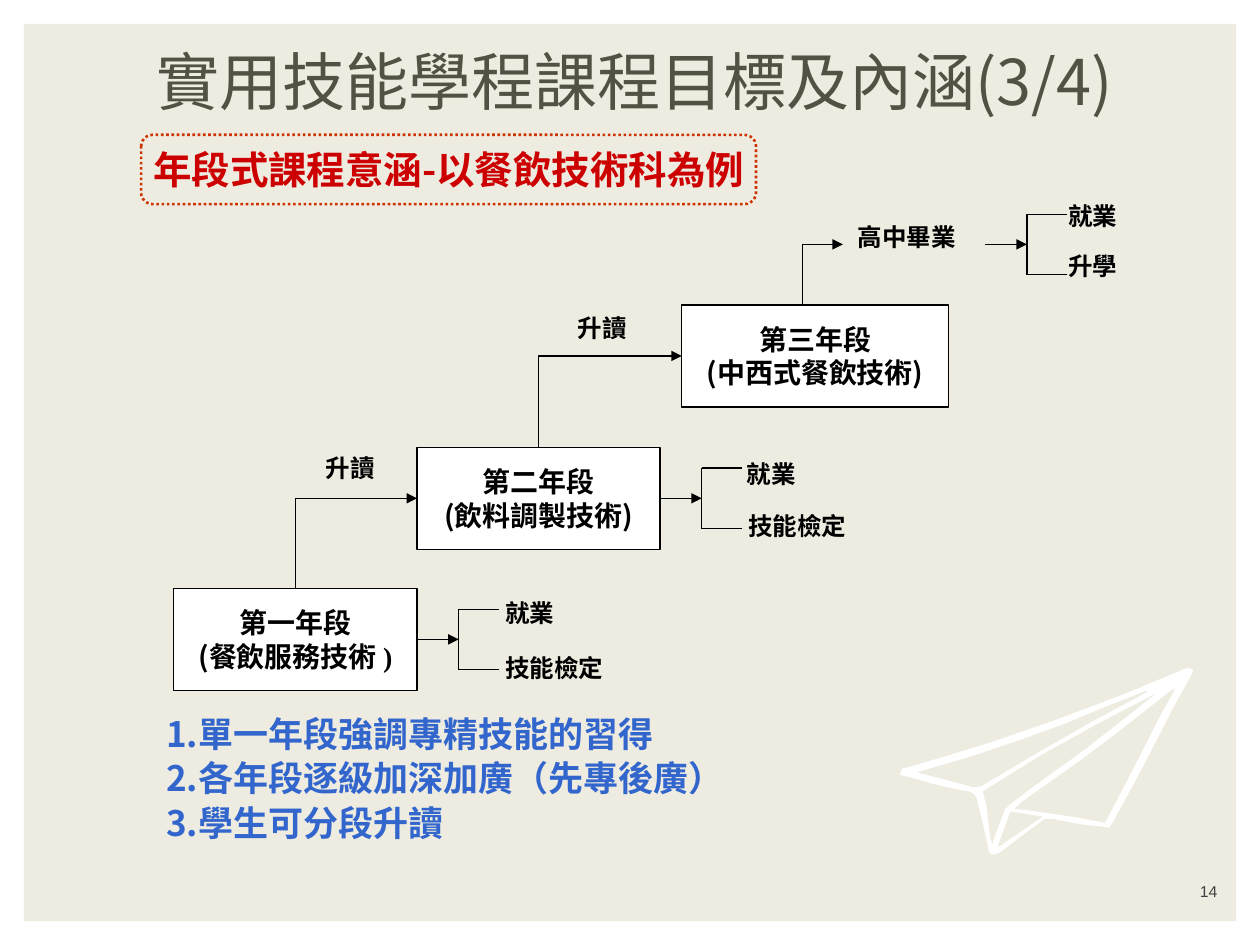
from lxml import etree
from pptx import Presentation
from pptx import util as u
from pptx.dml.color import RGBColor
from pptx.enum import dml, shapes, text
from pptx.oxml.ns import qn

COLORS = {"panel": "EEECE1", "white": "FFFFFF", "black": "000000", "title": "525244",
          "red": "CC0000", "border": "CC3300", "blue": "3366CC", "number": "404040"}
SANS, SERIF = "Noto Sans CJK SC", "Times New Roman"
ALIGN, ANCHOR = text.PP_ALIGN, text.MSO_ANCHOR
BOX_WIDTH, BOX_HEIGHT = 1.93, 0.81
PLANE = [
    [(7.14, 6.15), (7.16, 6.1), (7.24, 6.08), (7.48, 6.01), (7.87, 5.89), (8.39, 5.71),
     (8.92, 5.51), (9.09, 5.44), (9.4, 5.31), (9.44, 5.3), (9.47, 5.32), (9.46, 5.35),
     (9.32, 5.6), (9.1, 6.03), (8.95, 6.31), (8.83, 6.53), (8.8, 6.57), (8.75, 6.56),
     (8.64, 6.55), (8.51, 6.53), (8.36, 6.5), (8.29, 6.5), (8.1, 6.64), (7.93, 6.77),
     (7.9, 6.78), (7.87, 6.78), (7.85, 6.76), (7.8, 6.53), (7.75, 6.33), (7.73, 6.3),
     (7.69, 6.28), (7.57, 6.26), (7.4, 6.22), (7.23, 6.17)],
    [(9.33, 5.46), (9.28, 5.49), (9.23, 5.53), (8.82, 5.85), (8.58, 6.03), (8.1, 6.37),
     (8.05, 6.42), (8.15, 6.43), (8.5, 6.48), (8.77, 6.53), (8.83, 6.42), (8.96, 6.17),
     (9.21, 5.68), (9.3, 5.52)],
    [(7.27, 6.13), (7.47, 6.18), (7.73, 6.25), (7.79, 6.24), (8.26, 5.96), (8.7, 5.71),
     (9.0, 5.55), (9.11, 5.49), (9.1, 5.48), (8.77, 5.61), (8.46, 5.74), (8.13, 5.86),
     (7.72, 6.0), (7.31, 6.12)],
    [(7.8, 6.28), (7.83, 6.4), (7.86, 6.66), (7.88, 6.7), (7.89, 6.65), (7.98, 6.42),
     (8.0, 6.4), (8.14, 6.29), (8.61, 5.95), (8.98, 5.66), (9.18, 5.5), (8.7, 5.75), (8.25, 6.0)],
    [(7.92, 6.71), (7.93, 6.72), (8.28, 6.48), (8.02, 6.44)],
]


def color(name):
    return RGBColor.from_string(COLORS[name])


def inches(*values):
    return [u.Inches(value) for value in values]


def write_text(shape, lines, size=14, font=SANS, fill="black", bold=True, align=ALIGN.LEFT,
               anchor=ANCHOR.TOP, wrap=True, hanging=0, line_spacing=None, gap=0):
    frame = shape.text_frame
    frame.word_wrap = wrap
    frame.vertical_anchor = anchor
    for index, line in enumerate(lines):
        paragraph = frame.paragraphs[0] if index == 0 else frame.add_paragraph()
        paragraph.alignment = align
        if line_spacing:
            paragraph.line_spacing = line_spacing
        if gap and index:
            paragraph.space_before = u.Pt(gap)
        if hanging:
            properties = paragraph._p.get_or_add_pPr()
            properties.set("marL", str(u.Inches(hanging)))
            properties.set("indent", str(-u.Inches(hanging)))
        for content, face in [(line, font)] if isinstance(line, str) else line:
            run = paragraph.add_run()
            run.text = content
            run.font.size, run.font.bold = u.Pt(size), bold
            run.font.color.rgb = color(fill)
            run.font.name = face
            etree.SubElement(run._r.rPr, qn("a:ea")).set("typeface", SANS)


def add_label(slide, box, lines, **text_format):
    label = slide.shapes.add_textbox(*inches(*box))
    write_text(label, lines, **text_format)
    return label


def add_box(slide, box, fill=None, line=None, width=0.75, kind=shapes.MSO_SHAPE.RECTANGLE):
    shape = slide.shapes.add_shape(kind, *inches(*box))
    shape.shadow.inherit = False
    if fill:
        shape.fill.solid()
        shape.fill.fore_color.rgb = color(fill)
    else:
        shape.fill.background()
    if line:
        shape.line.color.rgb = color(line)
        shape.line.width = u.Pt(width)
    else:
        shape.line.fill.background()
    return shape


def add_line(slide, start, end, arrow=False, kind=shapes.MSO_CONNECTOR.STRAIGHT):
    connector = slide.shapes.add_connector(kind, *inches(*start, *end))
    connector.line.color.rgb = color("black")
    connector.line.width = u.Pt(0.75)
    etree.SubElement(connector._element.spPr, qn("a:effectLst"))
    if arrow:
        etree.SubElement(connector.line._get_or_add_ln(), qn("a:tailEnd")).set("type", "triangle")
    return connector


def add_step_up(slide, start, end):
    rise, run = start[1] - end[1], end[0] - start[0]
    center_x, center_y = (start[0] + end[0]) / 2, (start[1] + end[1]) / 2
    connector = add_line(slide, (center_x - rise / 2, center_y - run / 2),
                         (center_x + rise / 2, center_y + run / 2), True, shapes.MSO_CONNECTOR.ELBOW)
    properties = connector._element.spPr
    properties.find(qn("a:prstGeom")).set("prst", "bentConnector2")
    properties.find(qn("a:xfrm")).set("rot", "16200000")


def add_fork(slide, left, middle, outcomes, source=None):
    spine, top, bottom = left + 0.33, middle - 0.24, middle + 0.24
    arrow = add_line(slide, (left, middle), (spine, middle), True)
    if source:
        arrow.begin_connect(source, 3)
    add_line(slide, (spine, top), (spine, bottom))
    for height in (top, bottom):
        add_line(slide, (spine, height), (spine + 0.32, height))
    for content, label_left, label_top, anchor in outcomes:
        add_label(slide, (label_left, label_top, 1.09, 0.4), [content], font=SERIF, anchor=anchor)


def add_stage(slide, box, lines):
    stage = add_box(slide, box, "white", "black")
    write_text(stage, lines, size=16, align=ALIGN.CENTER, anchor=ANCHOR.MIDDLE)
    return stage


def add_stage_diagram(slide):
    first, second, third = (1.38, 4.67), (3.31, 3.55), (5.41, 2.42)
    for lower, upper in ((first, second), (second, third)):
        add_step_up(slide, (lower[0] + BOX_WIDTH / 2, lower[1]), (upper[0], upper[1] + BOX_HEIGHT / 2))
    add_line(slide, (6.05, 2.42), (6.69, 1.94), True, shapes.MSO_CONNECTOR.ELBOW)
    first_stage = add_stage(slide, (*first, BOX_WIDTH, BOX_HEIGHT),
                            ["第一年段", [("(餐飲服務技術 ", SANS), (")", SERIF)]])
    second_stage = add_stage(slide, (*second, BOX_WIDTH, BOX_HEIGHT), ["第二年段", "(飲料調製技術)"])
    add_stage(slide, (*third, 2.12, BOX_HEIGHT), ["第三年段", "(中西式餐飲技術)"])

    add_fork(slide, first[0] + BOX_WIDTH, first[1] + BOX_HEIGHT / 2,
             [("就業", 3.91, 4.66, ANCHOR.MIDDLE), ("技能檢定", 3.91, 5.1, ANCHOR.MIDDLE)], first_stage)
    add_fork(slide, second[0] + BOX_WIDTH, second[1] + BOX_HEIGHT / 2,
             [("就業", 5.83, 3.59, ANCHOR.TOP), ("技能檢定", 5.84, 4.01, ANCHOR.TOP)], second_stage)
    add_fork(slide, 7.82, 1.94,
             [("就業", 8.38, 1.55, ANCHOR.TOP), ("升學", 8.38, 1.94, ANCHOR.TOP)])
    add_label(slide, (6.71, 1.71, 1.19, 0.4), ["高中畢業"], font=SERIF)
    for left, top in ((2.41, 3.5), (4.41, 2.39)):
        add_label(slide, (left, top, 0.74, 0.42), ["升讀"], font=SERIF,
                  align=ALIGN.CENTER, anchor=ANCHOR.MIDDLE)


def add_title(slide, box):
    title = slide.shapes.title
    title.left, title.top, title.width, title.height = inches(*box)
    write_text(title, ["實用技能學程課程目標及內涵(3/4)"], size=36, fill="title", bold=False,
               anchor=ANCHOR.MIDDLE)
    effects = etree.Element(qn("a:effectLst"))
    shadow = etree.SubElement(effects, qn("a:outerShdw"), dist="35921", dir="2700000")
    etree.SubElement(shadow, qn("a:srgbClr")).set("val", COLORS["white"])
    title.text_frame.paragraphs[0].runs[0]._r.rPr.find(qn("a:solidFill")).addnext(effects)


def add_subtitle(slide, box):
    subtitle = add_box(slide, box, line="border", width=1.5, kind=shapes.MSO_SHAPE.ROUNDED_RECTANGLE)
    subtitle.line.dash_style = dml.MSO_LINE.ROUND_DOT
    write_text(subtitle, ["年段式課程意涵-以餐飲技術科為例"], size=22, fill="red",
               align=ALIGN.CENTER, anchor=ANCHOR.MIDDLE, wrap=False)


def add_paper_plane(slide):
    outline, *holes = [[inches(*point) for point in contour] for contour in PLANE]
    builder = slide.shapes.build_freeform(*outline[0])
    builder.add_line_segments(outline[1:])
    for hole in holes:
        builder.move_to(*hole[0])
        builder.add_line_segments(hole[1:])
    plane = builder.convert_to_shape()
    plane.shadow.inherit = False
    plane.fill.solid()
    plane.fill.fore_color.rgb = color("white")
    plane.line.fill.background()


def main():
    presentation = Presentation()
    presentation.slide_width, presentation.slide_height = inches(10, 7.5)
    slide = presentation.slides.add_slide(presentation.slide_layouts[5])
    panel = add_box(slide, (0.19, 0.19, 9.62, 7.12), "panel")
    slide.shapes._spTree.insert(2, panel._element)
    add_title(slide, (1.14, 0.13, 8.86, 1.01))
    add_subtitle(slide, (1.12, 1.07, 4.88, 0.55))
    add_stage_diagram(slide)
    add_label(slide, (1.22, 5.64, 4.69, 1.18),
              ["1.單一年段強調專精技能的習得", "2.各年段逐級加深加廣（先專後廣）", "3.學生可分段升讀"],
              size=20, fill="blue", hanging=0.67, line_spacing=0.9, gap=4)
    add_paper_plane(slide)
    add_label(slide, (8.56, 6.9, 1.2, 0.3), ["14"], size=9, font="Arial", fill="number",
              bold=False, align=ALIGN.RIGHT, anchor=ANCHOR.BOTTOM)
    presentation.save("out.pptx")


if __name__ == "__main__":
    main()
